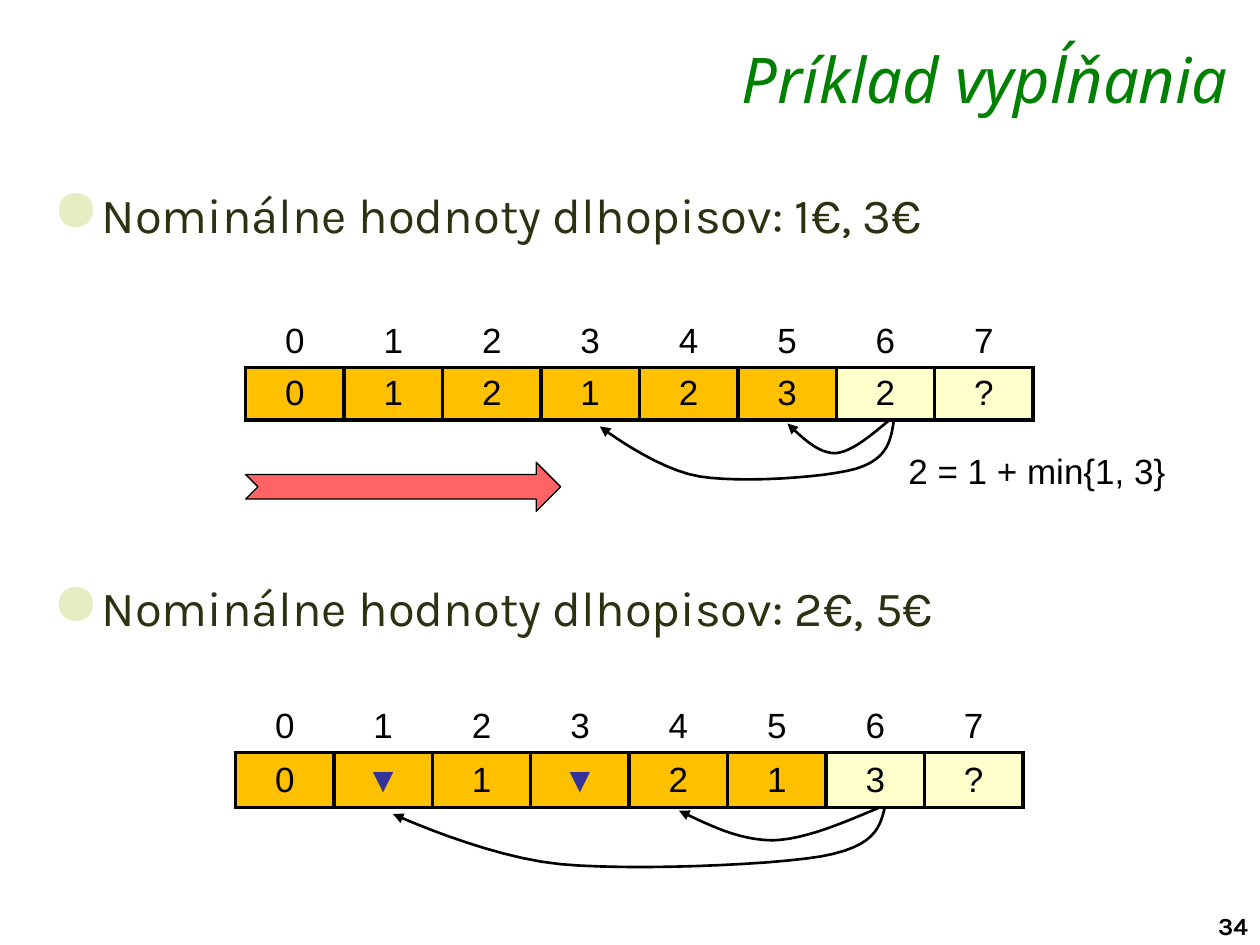
from dataclasses import dataclass

from lxml.etree import SubElement as Sub
from pptx import Presentation as Deck
from pptx.dml.color import RGBColor as RGB
from pptx.enum.shapes import MSO_SHAPE as Shape
from pptx.enum.text import MSO_ANCHOR as Anchor, PP_ALIGN as Align
from pptx.oxml.ns import qn
from pptx.util import Pt


@dataclass(frozen=True)
class Theme:
    ink: str = "000000"
    head: str = "008000"
    body: str = "2B3212"
    dot: str = "E5EEC2"
    done: str = "FFC000"
    open: str = "FFFFCC"
    blank: str = "FFFFFF"
    mark: str = "333399"
    arrow: str = "FF0000"
    sans: str = "Arial"
    text: str = "Karla"
    title: str = "Noto Sans"
    big: int = 36
    mid: int = 28
    small: int = 20
    tiny: int = 14


SHORT = [(1, 0), (.82, .45), (.63, .94), (.47, .97), (.3, .97), (.15, .52), (0, .09)]
LONG = [(1, 0), (.99, .31), (.98, .61), (.87, .76), (.76, .9), (.48, .98), (.34, .88),
        (.19, .77), (0, .1), (0, .1)]


def write(frame, text, font, size, color, bold=False, italic=False,
          align=Align.LEFT, dot=None, before=0, more=False):
    para = frame.add_paragraph() if more else frame.paragraphs[0]
    para.alignment = align
    if dot:
        props = para._p.get_or_add_pPr()
        props.set("marL", str(Pt(28)))
        props.set("indent", str(Pt(-28)))
        Sub(Sub(props, qn("a:buClr")), qn("a:srgbClr"), val=dot)
        Sub(props, qn("a:buSzPct"), val="120000")
        Sub(props, qn("a:buChar"), char="●")
    if before:
        para.space_before = Pt(before)
    run = para.add_run()
    run.text = text
    face = run.font
    face.name, face.size, face.bold, face.italic = font, Pt(size), bold, italic
    face.color.rgb = RGB.from_string(color)


def curve(knots, steps=12):
    """Return points along a chain of cubic arcs."""
    points = [knots[0]]
    for i in range(0, len(knots) - 3, 3):
        a, b, c, d = knots[i:i + 4]
        for n in range(1, steps + 1):
            t = n / steps
            u = 1 - t
            points.append(tuple(
                u ** 3 * p + 3 * u * u * t * q + 3 * u * t * t * r + t ** 3 * s
                for p, q, r, s in zip(a, b, c, d)))
    return points


class Page:
    def __init__(self, deck, theme):
        self.theme = theme
        self.slide = deck.slides.add_slide(deck.slide_layouts[5])
        self.shapes = self.slide.shapes

    def title(self, text, x, y, w, h):
        box, look = self.shapes.title, self.theme
        box.left, box.top, box.width, box.height = map(Pt, (x, y, w, h))
        frame = box.text_frame
        frame.vertical_anchor = Anchor.TOP
        frame.margin_top = Pt(1)
        write(frame, text, look.title, look.big, look.head, italic=True, align=Align.RIGHT)

    def box(self, x, y, w, h):
        frame = self.shapes.add_textbox(*map(Pt, (x, y, w, h))).text_frame
        frame.word_wrap = True
        return frame

    def label(self, text, x, y, w, h, **kind):
        write(self.box(x, y, w, h), text, **kind)

    def points(self, lines, x, y, w, h, gap):
        frame, look = self.box(x, y, w, h), self.theme
        for i, line in enumerate(lines):
            write(frame, line, look.text, look.mid, look.body,
                  dot=look.dot, before=gap * i, more=i > 0)

    def grid(self, values, x, y, rows, col=56.25):
        look, count = self.theme, len(values)
        table = self.shapes.add_table(
            2, count, Pt(x), Pt(y), Pt(col * count), Pt(sum(rows))).table
        table.first_row = table.horz_banding = False
        for row, high in zip(table.rows, rows):
            row.height = Pt(high)
        for i, value in enumerate(values):
            table.columns[i].width = Pt(col)
            fill = look.done if i < count - 2 else look.open
            self.cell(table.cell(0, i), str(i), look.blank, "B")
            self.cell(table.cell(1, i), value, fill, "LRTB")

    def cell(self, cell, text, fill, sides):
        look = self.theme
        cell.margin_top = cell.margin_bottom = Pt(3)
        cell.vertical_anchor = Anchor.MIDDLE
        props = cell._tc.get_or_add_tcPr()
        for side in sides:
            edge = Sub(props, qn(f"a:ln{side}"), w=str(Pt(2.25)))
            Sub(Sub(edge, qn("a:solidFill")), qn("a:srgbClr"), val=look.ink)
        cell.fill.solid()
        cell.fill.fore_color.rgb = RGB.from_string(fill)
        color = look.mark if text == "▼" else look.ink
        write(cell.text_frame, text, look.sans, look.small, color, align=Align.CENTER)

    def line(self, shape, width):
        shape.shadow.inherit = False
        shape.line.color.rgb = RGB.from_string(self.theme.ink)
        shape.line.width = Pt(width)

    def link(self, knots, x, y, w, h):
        dots = [(Pt(x + w * a), Pt(y + h * b)) for a, b in curve(knots)]
        pen = self.shapes.build_freeform(*dots[0])
        pen.add_line_segments(dots[1:], close=False)
        shape = pen.convert_to_shape()
        shape.fill.background()
        self.line(shape, 1.5)
        Sub(shape.line._get_or_add_ln(), qn("a:tailEnd"), type="triangle")

    def arrow(self, x, y, w, h):
        shape = self.shapes.add_shape(Shape.NOTCHED_RIGHT_ARROW, *map(Pt, (x, y, w, h)))
        shape.fill.solid()
        shape.fill.fore_color.rgb = RGB.from_string(self.theme.arrow)
        color = shape._element.spPr.find(qn("a:solidFill")).find(qn("a:srgbClr"))
        Sub(color, qn("a:alpha"), val="61000")
        self.line(shape, 0.75)


def main():
    deck = Deck()
    deck.slide_width, deck.slide_height = Pt(720), Pt(540)
    look = Theme()
    page = Page(deck, look)
    page.title("Príklad vypĺňania", 165, 22.3, 543.6, 41.8)
    page.points(["Nominálne hodnoty dlhopisov: 1€, 3€",
                 "Nominálne hodnoty dlhopisov: 2€, 5€"], 23, 102, 675, 416, gap=191)
    page.grid("0121232?", 140.4, 180, (29.25, 29.25))
    page.link(SHORT, 450, 240.3, 58, 19.3)
    page.link(LONG, 342.8, 240, 168, 36.7)
    page.label("2 = 1 + min{1, 3}", 512, 253.5, 191.5, 31.5,
               font=look.sans, size=look.small, color=look.ink)
    page.arrow(140.4, 264.2, 180, 28)
    page.grid("0▼1▼213?", 134.6, 399.6, (30.5, 31.5))
    page.link(SHORT, 388, 461.5, 114.5, 19.3)
    page.link(LONG, 224.6, 461.5, 281, 36.7)
    page.label("34", 689, 517, 36.7, 23.8,
               font=look.text, size=look.tiny, color=look.ink, bold=True)
    deck.save("out.pptx")


if __name__ == "__main__":
    main()
